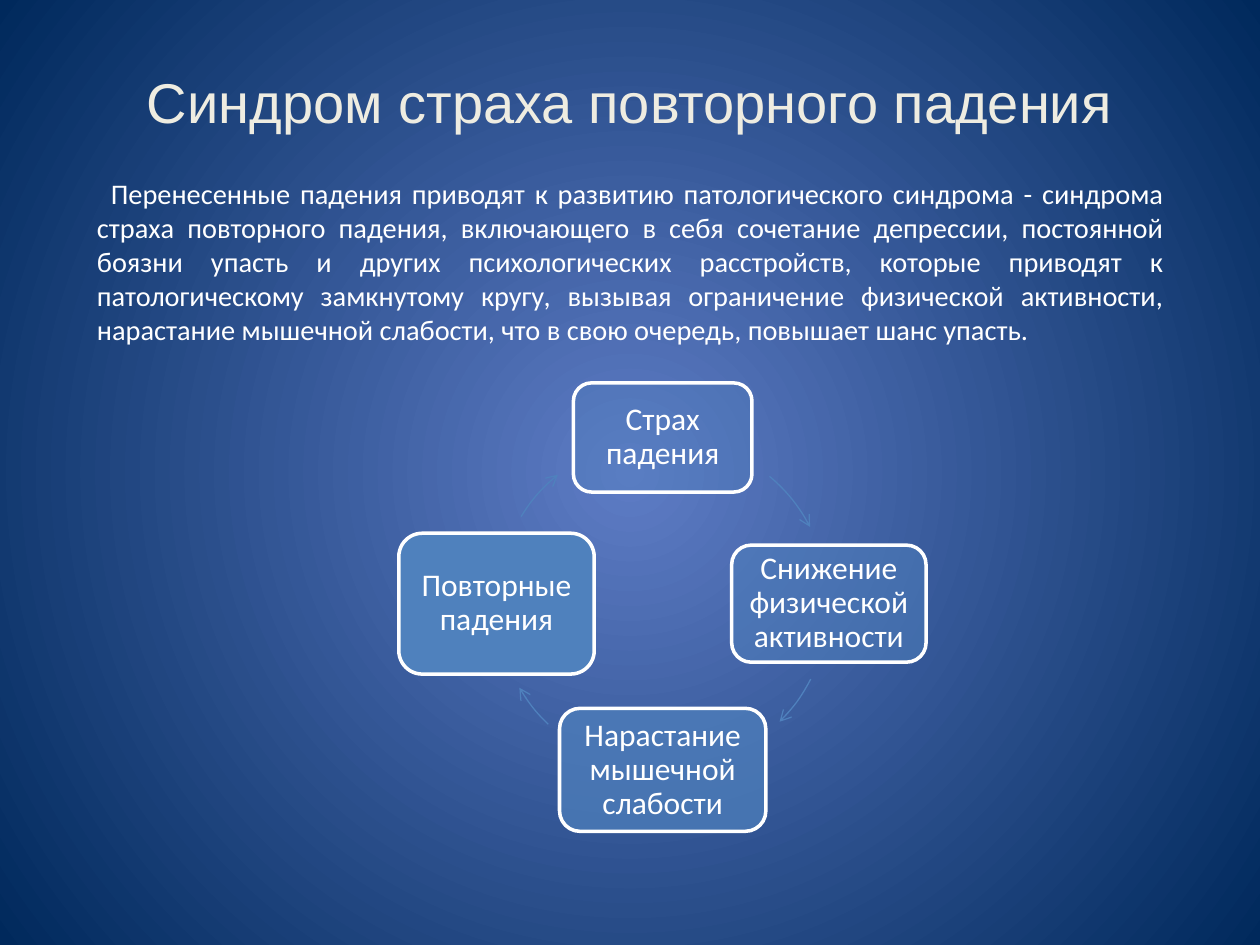
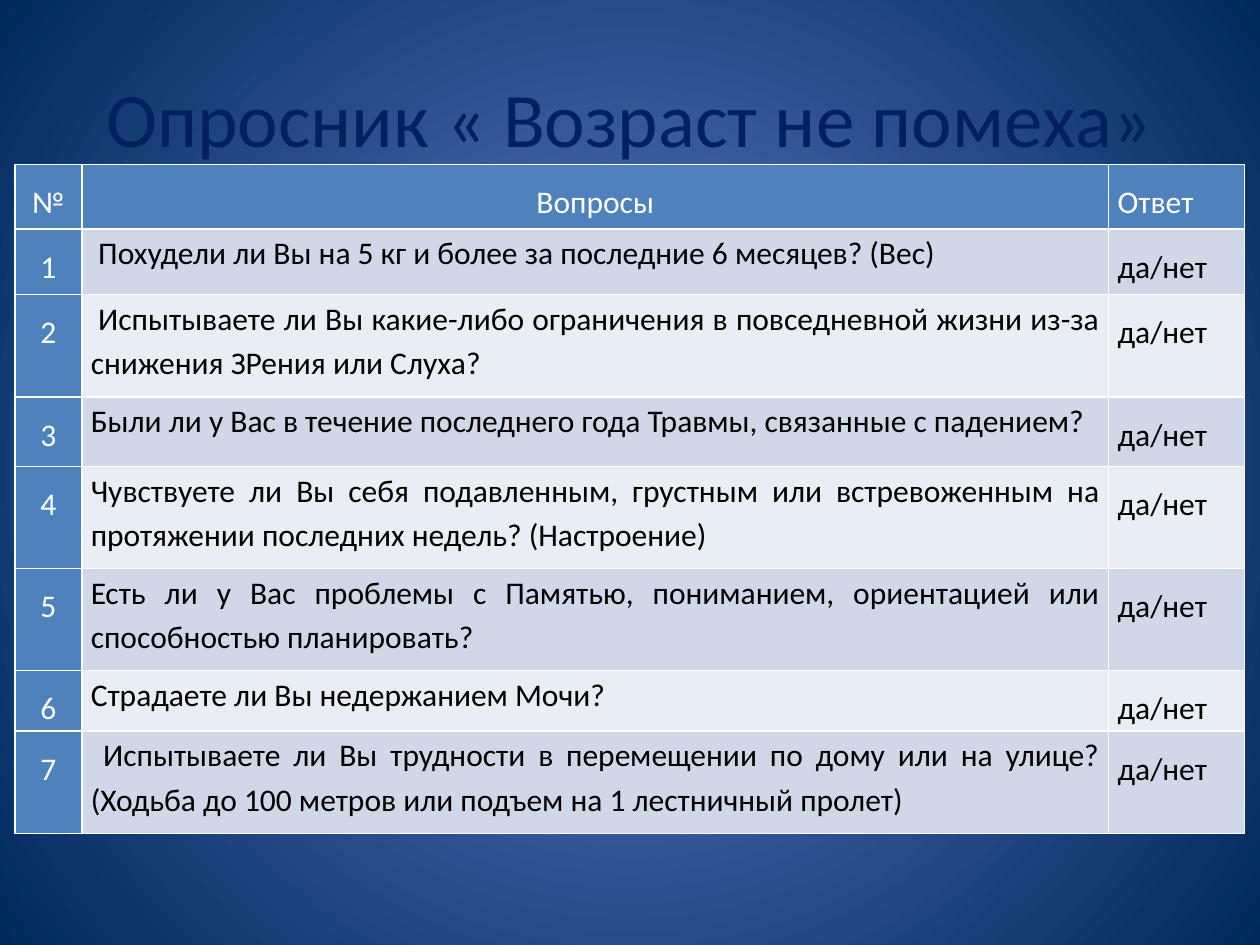
import dataclasses
import math

import lxml.etree
import pptx
import pptx.dml.color
import pptx.enum.shapes
import pptx.enum.text
import pptx.oxml.ns
import pptx.util

Cm = pptx.util.Cm
Pt = pptx.util.Pt
qn = pptx.oxml.ns.qn
ALIGN = pptx.enum.text.PP_ALIGN
MIDDLE = pptx.enum.text.MSO_ANCHOR.MIDDLE
SHAPE = pptx.enum.shapes.MSO_SHAPE


@dataclasses.dataclass(frozen=True)
class Theme:
    glow: str = "5E7CC5"
    depth: str = "00295C"
    accent: str = "4F81BD"
    white: str = "FFFFFF"
    black: str = "000000"
    cream: str = "EEECE1"
    navy: str = "002060"
    bands: tuple = ("D0D8E8", "E9EDF4")
    heading_font: str = "Arial"
    font: str = "Calibri"
    syndrome_size: float = 32
    survey_size: float = 44
    summary_size: float = 16.2
    label_size: float = 18


THEME = Theme()

SYNDROME_TITLE = "Синдром страха повторного падения"
SYNDROME_SUMMARY = (
    "Перенесенные падения приводят к развитию патологического синдрома - синдрома "
    "страха повторного падения, включающего в себя сочетание депрессии, постоянной "
    "боязни упасть и других психологических расстройств, которые приводят к "
    "патологическому замкнутому кругу, вызывая ограничение физической активности, "
    "нарастание мышечной слабости, что в свою очередь, повышает шанс упасть."
)
CYCLE_CENTRE = (13.36, 12.17)
CYCLE_RADIUS = 3.35
CYCLE_STAGES = [
    {"label": "Страх падения", "size": (3.6, 2.2), "opacity": 30, "arc": (310, 332.5)},
    {"label": "Снижение физической активности", "size": (3.92, 2.36), "opacity": 50, "arc": (27, 45.3)},
    {"label": "Нарастание мышечной слабости", "size": (4.16, 2.48), "opacity": 70, "arc": (133.5, 149.6)},
    {"label": "Повторные падения", "size": (3.94, 2.84), "opacity": 100, "arc": (211.6, 230.9)},
]

SURVEY_TITLE = "Опросник « Возраст не помеха»"
SURVEY_HEADINGS = ("№", "Вопросы", "Ответ")
ANSWER = "да/нет"
QUESTIONS = [
    ("Похудели ли Вы на 5 кг и более за последние 6 месяцев? (Вес)", 1.32, 0.15),
    ("Испытываете ли Вы какие-либо ограничения в повседневной жизни из-за "
     "снижения ЗРения или Слуха?", 2.06, 0.15),
    ("Были ли у Вас в течение последнего года Травмы, связанные с падением?", 1.4, 0),
    ("Чувствуете ли Вы себя подавленным, грустным или встревоженным на "
     "протяжении последних недель? (Настроение)", 2.06, 0),
    ("Есть ли у Вас проблемы с Памятью, пониманием, ориентацией или "
     "способностью планировать?", 2.06, 0),
    ("Страдаете ли Вы недержанием Мочи?", 1.22, 0),
    ("Испытываете ли Вы трудности в перемещении по дому или на улице? "
     "(Ходьба до 100 метров или подъем на 1 лестничный пролет)", 2.06, 0.25),
]
SURVEY_COLUMNS = (1.35, 20.7, 2.74)
HEADING_HEIGHT = 1.3


def rgb(colour):
    return pptx.dml.color.RGBColor.from_string(colour)


def add_xml(parent, tag, **attributes):
    return lxml.etree.SubElement(parent, qn(tag), attributes)


def place(shape, left, top, width, height):
    shape.left, shape.top = Cm(left), Cm(top)
    shape.width, shape.height = Cm(width), Cm(height)


def write(frame, text, size, colour, align=ALIGN.CENTER, font=THEME.font, spacing=1.0, indent=0):
    paragraph = frame.paragraphs[0]
    paragraph.alignment = align
    paragraph.line_spacing = spacing
    paragraph.space_before = Pt(0)
    properties = paragraph._p.get_or_add_pPr()
    properties.set("marL", "0")
    properties.set("indent", str(Cm(indent)))
    add_xml(properties, "a:buNone")
    run = paragraph.add_run()
    run.text = text
    run.font.name = font
    run.font.size = Pt(size)
    run.font.bold = False
    run.font.color.rgb = rgb(colour)


def fill_placeholder(holder, box, text, size, colour, **style):
    place(holder, *box)
    frame = holder.text_frame
    frame.word_wrap = True
    frame.auto_size = pptx.enum.text.MSO_AUTO_SIZE.NONE
    frame.vertical_anchor = MIDDLE
    write(frame, text, size, colour, **style)


def paint_background(master):
    fill = master.background.fill
    fill.gradient()
    for stop, colour, position in zip(fill.gradient_stops, (THEME.glow, THEME.depth), (0, 1)):
        stop.color.rgb = rgb(colour)
        stop.position = position
    gradient = master.element.find(".//" + qn("p:bgPr") + "/" + qn("a:gradFill"))
    gradient.remove(gradient.find(qn("a:lin")))
    circle = add_xml(gradient, "a:path", path="circle")
    add_xml(circle, "a:fillToRect", **dict.fromkeys("ltrb", "50000"))


def add_stage(slide, stage, angle):
    width, height = stage["size"]
    x = CYCLE_CENTRE[0] + CYCLE_RADIUS * math.cos(math.radians(angle))
    y = CYCLE_CENTRE[1] + CYCLE_RADIUS * math.sin(math.radians(angle))
    node = slide.shapes.add_shape(
        SHAPE.ROUNDED_RECTANGLE, Cm(x - width / 2), Cm(y - height / 2), Cm(width), Cm(height))
    node.shadow.inherit = False
    node.fill.solid()
    node.fill.fore_color.rgb = rgb(THEME.accent)
    tint = node._element.spPr.find(qn("a:solidFill"))[0]
    add_xml(tint, "a:alpha", val=str(stage["opacity"] * 1000))
    node.line.color.rgb = rgb(THEME.white)
    node.line.width = Pt(2)
    frame = node.text_frame
    frame.word_wrap = True
    frame.vertical_anchor = MIDDLE
    frame.margin_left = frame.margin_right = frame.margin_top = frame.margin_bottom = Cm(0.08)
    write(frame, stage["label"], THEME.label_size, THEME.white, spacing=0.9)


def add_cycle_arrow(slide, angles):
    left, top = (centre - CYCLE_RADIUS for centre in CYCLE_CENTRE)
    diameter = 2 * CYCLE_RADIUS
    arrow = slide.shapes.add_shape(SHAPE.ARC, Cm(left), Cm(top), Cm(diameter), Cm(diameter))
    for index, angle in enumerate(angles):
        arrow.adjustments[index] = angle * 0.6
    arrow.shadow.inherit = False
    arrow.fill.background()
    arrow.line.color.rgb = rgb(THEME.accent)
    arrow.line.width = Pt(0.75)
    add_xml(arrow.line._get_or_add_ln(), "a:tailEnd", type="arrow")


def fill_cell(cell, text, background, colour, align, spacing=1.5, indent=0):
    cell.margin_left = cell.margin_right = Cm(0.18)
    cell.margin_top = cell.margin_bottom = 0
    write(cell.text_frame, text, THEME.label_size, colour, align=align, spacing=spacing, indent=indent)
    properties = cell._tc.get_or_add_tcPr()
    for side in ("a:lnL", "a:lnR", "a:lnT", "a:lnB"):
        border = add_xml(properties, side, w=str(Pt(1)))
        add_xml(add_xml(border, "a:solidFill"), "a:srgbClr", val=THEME.white)
    cell.fill.solid()
    cell.fill.fore_color.rgb = rgb(background)


def build_syndrome(presentation):
    slide = presentation.slides.add_slide(presentation.slide_layouts[1])
    fill_placeholder(slide.shapes.title, (1.7, 0.79, 22, 2.49), SYNDROME_TITLE,
                     THEME.syndrome_size, THEME.cream, font=THEME.heading_font)
    fill_placeholder(slide.placeholders[1], (1.7, 3.3, 22, 3.94), SYNDROME_SUMMARY,
                     THEME.summary_size, THEME.white, align=ALIGN.JUSTIFY, indent=0.28)
    for index, stage in enumerate(CYCLE_STAGES):
        add_stage(slide, stage, index * 360 / len(CYCLE_STAGES) - 90)
        add_cycle_arrow(slide, stage["arc"])


def build_survey(presentation):
    slide = presentation.slides.add_slide(presentation.slide_layouts[5])
    fill_placeholder(slide.shapes.title, (1.27, 0.76, 22.86, 3.18), SURVEY_TITLE,
                     THEME.survey_size, THEME.navy)
    heights = [HEADING_HEIGHT] + [height for _, height, _ in QUESTIONS]
    survey = slide.shapes.add_table(
        len(heights), len(SURVEY_COLUMNS), Cm(0.3), Cm(3.32),
        Cm(sum(SURVEY_COLUMNS)), Cm(sum(heights))).table
    survey.first_row = survey.horz_banding = False
    for column, width in zip(survey.columns, SURVEY_COLUMNS):
        column.width = Cm(width)
    for row, height in zip(survey.rows, heights):
        row.height = Cm(height)
    for column, heading in enumerate(SURVEY_HEADINGS):
        align = ALIGN.JUSTIFY if heading == "Ответ" else ALIGN.CENTER
        fill_cell(survey.cell(0, column), heading, THEME.accent, THEME.white, align)
    for number, (question, _, indent) in enumerate(QUESTIONS, 1):
        band = THEME.bands[(number - 1) % 2]
        fill_cell(survey.cell(number, 0), str(number), THEME.accent, THEME.white, ALIGN.CENTER)
        fill_cell(survey.cell(number, 1), question, band, THEME.black, ALIGN.JUSTIFY, 1.15, indent)
        fill_cell(survey.cell(number, 2), ANSWER, band, THEME.black, ALIGN.JUSTIFY)


def main():
    presentation = pptx.Presentation()
    presentation.slide_width, presentation.slide_height = Cm(25.4), Cm(19.05)
    paint_background(presentation.slide_master)
    build_syndrome(presentation)
    build_survey(presentation)
    presentation.save("out.pptx")


if __name__ == "__main__":
    main()
